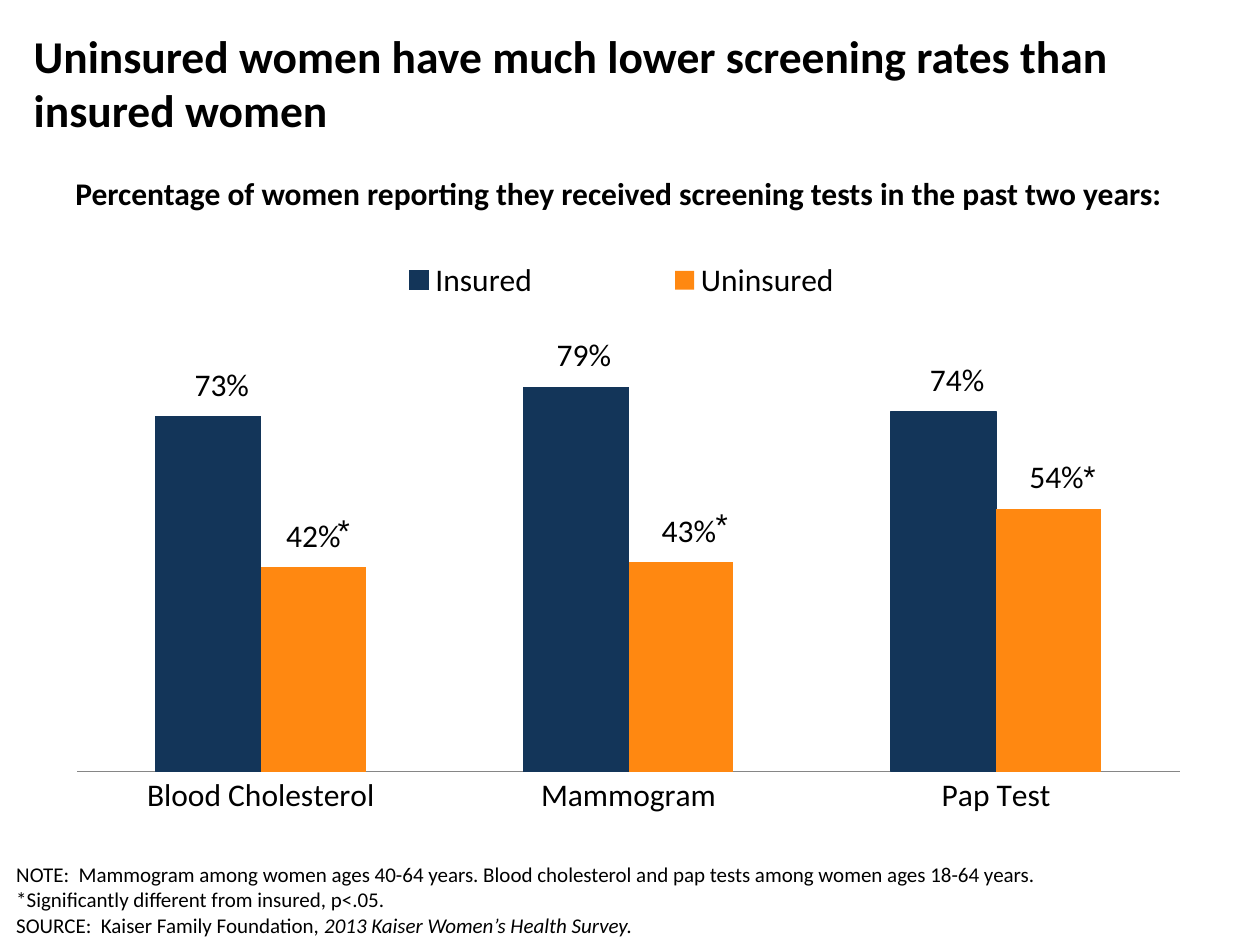
"""Build a slide comparing screening rates of insured and uninsured women."""
import pptx
import pptx.chart.data
import pptx.dml.color
import pptx.enum.chart
import pptx.enum.text
import pptx.oxml
import pptx.oxml.ns
import pptx.util

Pt = pptx.util.Pt

TITLE = "Uninsured women have much lower screening rates than insured women"
SUBTITLE = "Percentage of women reporting they received screening tests in the past two years:"
NOTES = [
    [("NOTE:  Mammogram among women ages 40-64 years. Blood cholesterol and pap tests among women ages 18-64 years.", False)],
    [("*Significantly different from insured, p<.05.", False)],
    [("SOURCE:  Kaiser Family Foundation, ", False), ("2013 Kaiser Women’s Health Survey.", True)],
]
TESTS = ["Blood Cholesterol", "Mammogram", "Pap Test"]
SERIES = [
    {"name": "Insured", "rates": [0.73, 0.79, 0.74], "color": "133559", "shifts": [0.012, 0.007, 0.012]},
    {"name": "Uninsured", "rates": [0.42, 0.43, 0.54], "color": "FF8811", "shifts": [0, 0.007, 0.007]},
]
LABEL_RISE = -0.012
STARS = [(185.8, 288.7), (401.8, 285.1), (612, 257.8)]
CHART_FRAME = (38.2, 121, 645.8, 355.7)
PLOT_AREA = {"x": 0.009, "y": 0.196, "w": 0.976, "h": 0.704}
LEGEND_AREA = {"x": 0.186, "y": 0.06, "w": 0.61, "h": 0.1}


def color_of(value):
    return pptx.dml.color.RGBColor.from_string(value)


def style(font, size, name="Calibri", bold=False, italic=False):
    font.size, font.name, font.bold, font.italic = Pt(size), name, bold, italic
    font.color.rgb = color_of("000000")


def add_text(page, frame, lines, size, name="Calibri", bold=False, wrap=True):
    box = page.shapes.add_textbox(*map(Pt, frame))
    text_frame = box.text_frame
    text_frame.word_wrap = wrap
    for index, line in enumerate(lines):
        para = text_frame.paragraphs[0] if index == 0 else text_frame.add_paragraph()
        for words, italic in line:
            span = para.add_run()
            span.text = words
            style(span.font, size, name, bold, italic)


def manual_layout(area, modes=()):
    parts = [(mode, "edge") for mode in modes] + list(area.items())
    if "yMode" in modes:
        parts.insert(0, ("layoutTarget", "inner"))
    body = "".join(f'<c:{tag} val="{value}"/>' for tag, value in parts)
    namespace = pptx.oxml.ns.nsdecls("c")
    return pptx.oxml.parse_xml(
        f"<c:layout {namespace}><c:manualLayout>{body}</c:manualLayout></c:layout>")


def replace_layout(parent, layout, after=None):
    for old in parent.findall(pptx.oxml.ns.qn("c:layout")):
        parent.remove(old)
    if after is None:
        parent.insert(0, layout)
    else:
        parent.find(pptx.oxml.ns.qn(after)).addnext(layout)


def style_series(series, entry):
    color = color_of(entry["color"])
    series.format.fill.solid()
    series.format.fill.fore_color.rgb = color
    series.invert_if_negative = False
    if entry["name"] == "Insured":
        series.format.line.color.rgb = color
        series.format.line.width = Pt(0.75)
    labels = series.data_labels
    labels.show_value = True
    labels.number_format, labels.number_format_is_linked = "0%", False
    labels.position = pptx.enum.chart.XL_LABEL_POSITION.OUTSIDE_END
    style(labels.font, 18)
    for index, shift in enumerate(entry["shifts"]):
        label = series.points[index].data_label
        style(label.font, 18)
        label.position = pptx.enum.chart.XL_LABEL_POSITION.OUTSIDE_END
        element = labels._element.findall(pptx.oxml.ns.qn("c:dLbl"))[index]
        replace_layout(element, manual_layout({"x": shift, "y": LABEL_RISE}), "c:idx")


def add_rates_chart(page):
    data = pptx.chart.data.CategoryChartData(number_format="0%")
    data.categories = TESTS
    for entry in SERIES:
        data.add_series(entry["name"], entry["rates"])
    kind = pptx.enum.chart.XL_CHART_TYPE.COLUMN_CLUSTERED
    chart = page.shapes.add_chart(kind, *map(Pt, CHART_FRAME), data).chart
    style(chart.font, 18)
    chart.has_title = False

    plot = chart.plots[0]
    plot.gap_width, plot.overlap, plot.vary_by_categories = 150, 0, False
    for series, entry in zip(plot.series, SERIES):
        style_series(series, entry)

    no_tick = pptx.enum.chart.XL_TICK_MARK.NONE
    chart.category_axis.major_tick_mark = no_tick
    chart.category_axis.format.line.color.rgb = color_of("868686")
    chart.category_axis.format.line.width = Pt(0.75)
    rates = chart.value_axis
    rates.minimum_scale, rates.maximum_scale = 0, 0.9
    rates.has_major_gridlines = False
    rates.visible = False

    chart.has_legend = True
    chart.legend.position = pptx.enum.chart.XL_LEGEND_POSITION.RIGHT
    chart.legend.include_in_layout = False
    style(chart.legend.font, 18)
    modes = ("xMode", "yMode")
    legend_layout = manual_layout(LEGEND_AREA, modes)
    legend_layout[0].remove(legend_layout[0][0])
    replace_layout(chart.legend._element, legend_layout, "c:legendPos")
    plot_area = chart._chartSpace.chart.plotArea
    replace_layout(plot_area, manual_layout(PLOT_AREA, modes))


def main():
    deck = pptx.Presentation()
    deck.slide_width, deck.slide_height = Pt(720), Pt(540)
    page = deck.slides.add_slide(deck.slide_layouts[6])
    add_text(page, (12.2, 12.2, 696, 96), [[(TITLE, False)]], 26, bold=True)
    add_rates_chart(page)
    add_text(page, (2.2, 488.9, 664, 51), NOTES, 12)
    add_text(page, (36, 95.8, 640, 29), [[(SUBTITLE, False)]], 18, bold=True, wrap=False)
    for left, top in STARS:
        add_text(page, (left, top, 25, 29), [[("*", False)]], 18, name="Arial")
    deck.save("out.pptx")


if __name__ == "__main__":
    main()
